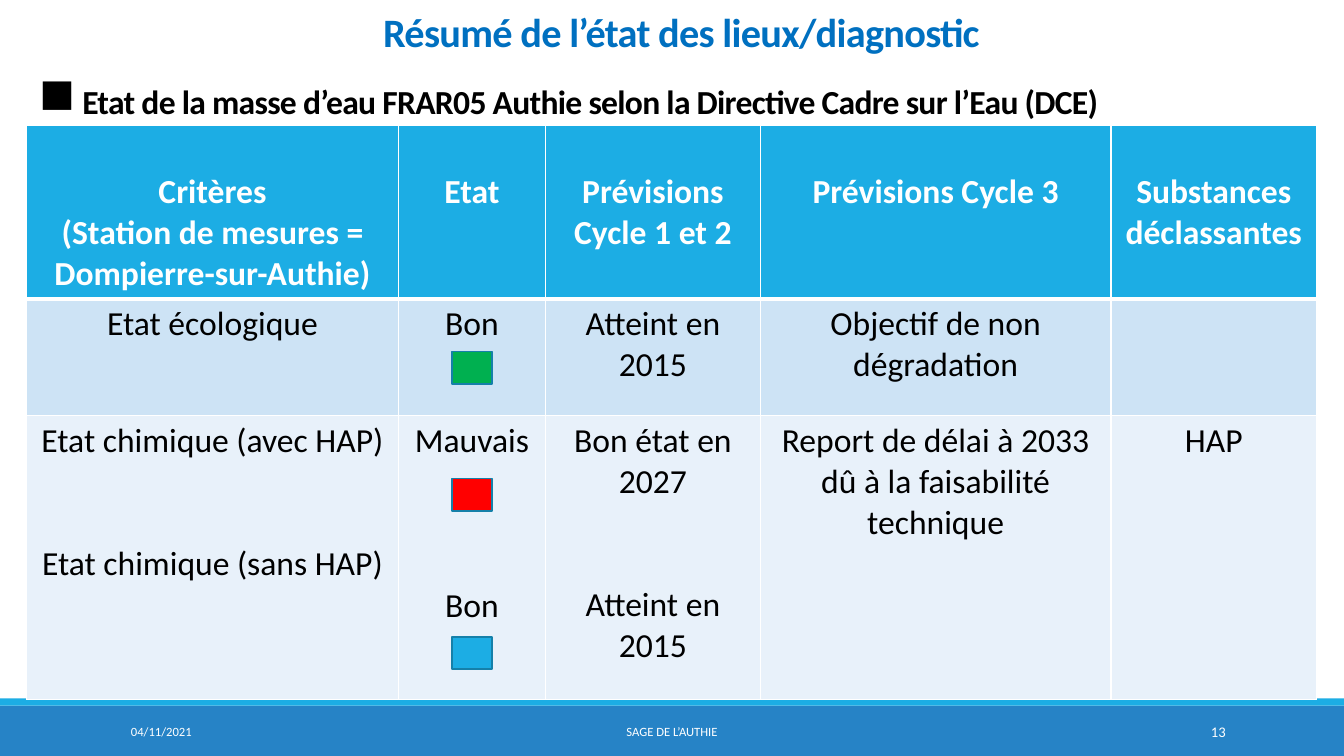
from lxml.etree import SubElement
from pptx import Presentation
from pptx.dml.color import RGBColor
from pptx.enum.shapes import MSO_SHAPE
from pptx.enum.text import MSO_ANCHOR, MSO_AUTO_SIZE, PP_ALIGN as ALIGN
from pptx.oxml.ns import qn
from pptx.util import Cm, Pt

TITLE = "Résumé de l’état des lieux/diagnostic"
SUBTITLE = "Etat de la masse d’eau FRAR05 Authie selon la Directive Cadre sur l’Eau (DCE)"
# Each cell lists its paragraphs as (text, number of lines left open above it).
HEADER = [
    [("Critères", 0), ("(Station de mesures = Dompierre-sur-Authie)", 0)],
    [("Etat", 0)],
    [("Prévisions Cycle 1 et 2", 0)],
    [("Prévisions Cycle 3", 0)],
    [("Substances déclassantes", 0)],
]
ECOLOGICAL = [
    [("Etat écologique", 0)],
    [("Bon", 0)],
    [("Atteint en 2015", 0)],
    [("Objectif de non dégradation", 0)],
    [],
]
CHEMICAL = [
    [("Etat chimique (avec HAP)", 0), ("Etat chimique (sans HAP)", 2)],
    [("Mauvais", 0), ("Bon", 3)],
    [("Bon état en 2027", 0), ("Atteint en 2015", 2)],
    [("Report de délai à 2033 dû à la faisabilité technique", 0)],
    [("HAP", 0)],
]
FOOTER = [  # text, left, width, size, alignment
    ("04/11/2021", 3.05, 6.86, 9, ALIGN.LEFT),
    ("SAGE DE L’AUTHIE", 10.24, 13.39, 9, ALIGN.CENTER),
    ("13", 27.51, 3.63, 10.5, ALIGN.RIGHT),
]

FONT = "Calibri"
WHITE = RGBColor(0xFF, 0xFF, 0xFF)
BLACK = RGBColor(0, 0, 0)
TITLE_BLUE = RGBColor(0x00, 0x70, 0xC0)
SKY = RGBColor(0x1C, 0xAD, 0xE4)
FOOTER_BLUE = RGBColor(0x26, 0x83, 0xC6)
PALE = RGBColor(0xCD, 0xE3, 0xF5)
PALER = RGBColor(0xE8, 0xF1, 0xFA)
GREEN = RGBColor(0x00, 0xB0, 0x50)
RED = RGBColor(0xFF, 0, 0)
OUTLINE = RGBColor(0x15, 0x80, 0xA9)

ROWS = [(HEADER, SKY, 4.38), (ECOLOGICAL, PALE, 2.95), (CHEMICAL, PALER, 7.14)]
COLUMN_WIDTHS = [9.37, 3.71, 5.41, 8.84, 5.18]
STATUS_MARKS = [(GREEN, 8.86), (RED, 12.06), (SKY, 16.05)]
TABLE_LEFT, TABLE_TOP = 0.67, 3.15
PAGE_WIDTH, PAGE_HEIGHT = 33.87, 19.05
CELL_SIZE = 24
LINE_HEIGHT = 29.3  # points taken by one table line
CELL_MARGIN = 0.13


def add_span(para, text, size, color, bold=False, spacing=None):
    span = para.add_run()
    span.text = text
    span.font.name, span.font.size = FONT, Pt(size)
    span.font.bold, span.font.color.rgb = bold, color
    if spacing is not None:
        span.font._element.set("spc", str(round(spacing * 100)))


def place(shape, left, top, width, height):
    shape.left, shape.top = Cm(left), Cm(top)
    shape.width, shape.height = Cm(width), Cm(height)


def add_block(page, left, top, width, height, color, outline=None):
    block = page.shapes.add_shape(
        MSO_SHAPE.RECTANGLE, Cm(left), Cm(top), Cm(width), Cm(height))
    block.shadow.inherit = False
    block.fill.solid()
    block.fill.fore_color.rgb = color
    if outline is None:
        block.line.fill.background()
    else:
        block.line.color.rgb = outline
        block.line.width = Pt(1.25)


def add_heading(box, text, size, color, bounds):
    """Fill a placeholder with one bold, tightly set line resting on its bottom edge."""
    place(box, *bounds)
    frame = box.text_frame
    frame.word_wrap, frame.auto_size = True, MSO_AUTO_SIZE.NONE
    frame.vertical_anchor = MSO_ANCHOR.BOTTOM
    para = frame.paragraphs[0]
    para.line_spacing, para.space_before = 0.85, Pt(0)
    add_span(para, text, size, color, True, -0.5)
    return para


def add_arrow_bullet(para):
    properties = para._p.get_or_add_pPr()
    properties.set("marL", str(Cm(0.96)))
    properties.set("indent", str(-Cm(0.96)))
    SubElement(properties, qn("a:buFont"), typeface="Wingdings 2")
    SubElement(properties, qn("a:buChar"), char="➢")


def set_borders(cell, top, bottom):
    for side, width in (("L", 1), ("R", 1), ("T", top), ("B", bottom)):
        line = SubElement(cell._tc.get_or_add_tcPr(), qn("a:ln" + side), w=str(Pt(width)))
        fill = SubElement(line, qn("a:solidFill"))
        SubElement(fill, qn("a:srgbClr"), val=str(WHITE))


def fill_cell(cell, content, color, row_index):
    is_header = row_index == 0
    set_borders(cell, 3 if row_index == 1 else 1, 3 if is_header else 1)
    cell.fill.solid()
    cell.fill.fore_color.rgb = color
    cell.margin_top = Cm(CELL_MARGIN) + (Pt(LINE_HEIGHT) if is_header else 0)
    for index, (text, open_lines) in enumerate(content):
        frame = cell.text_frame
        para = frame.add_paragraph() if index else frame.paragraphs[0]
        para.alignment = ALIGN.CENTER
        if open_lines:
            para.space_before = Pt(open_lines * LINE_HEIGHT)
        add_span(para, text, CELL_SIZE, WHITE if is_header else BLACK, is_header)


def add_status_table(page):
    heights = [height for _, _, height in ROWS]
    table = page.shapes.add_table(
        len(ROWS), len(COLUMN_WIDTHS), Cm(TABLE_LEFT), Cm(TABLE_TOP),
        Cm(sum(COLUMN_WIDTHS)), Cm(sum(heights))).table
    for column, width in zip(table.columns, COLUMN_WIDTHS):
        column.width = Cm(width)
    for row_index, (contents, color, height) in enumerate(ROWS):
        table.rows[row_index].height = Cm(height)
        for cell, content in zip(table.rows[row_index].cells, contents):
            fill_cell(cell, content, color, row_index)


def add_footer(page):
    add_block(page, 0, 17.78, PAGE_WIDTH, 1.27, FOOTER_BLUE)
    add_block(page, 0, 17.6, PAGE_WIDTH, 0.18, SKY)
    for text, left, width, size, alignment in FOOTER:
        box = page.shapes.add_textbox(Cm(left), Cm(17.93), Cm(width), Cm(1.02))
        frame = box.text_frame
        frame.word_wrap, frame.vertical_anchor = True, MSO_ANCHOR.MIDDLE
        frame.paragraphs[0].alignment = alignment
        add_span(frame.paragraphs[0], text, size, WHITE)


def main():
    deck = Presentation()
    deck.slide_width, deck.slide_height = Cm(PAGE_WIDTH), Cm(PAGE_HEIGHT)
    page = deck.slides.add_slide(deck.slide_layouts[1])
    title = add_heading(page.shapes.title, TITLE, 28.8, TITLE_BLUE, (3.2, 0.1, 27.94, 1.42))
    title.alignment = ALIGN.CENTER
    subtitle = add_heading(page.placeholders[1], SUBTITLE, 24, BLACK, (0.86, 2.21, 32.33, 0.97))
    add_arrow_bullet(subtitle)
    add_footer(page)
    add_status_table(page)
    for color, top in STATUS_MARKS:
        add_block(page, 11.4, top, 1, 0.81, color, OUTLINE)
    deck.save("out.pptx")


if __name__ == "__main__":
    main()
